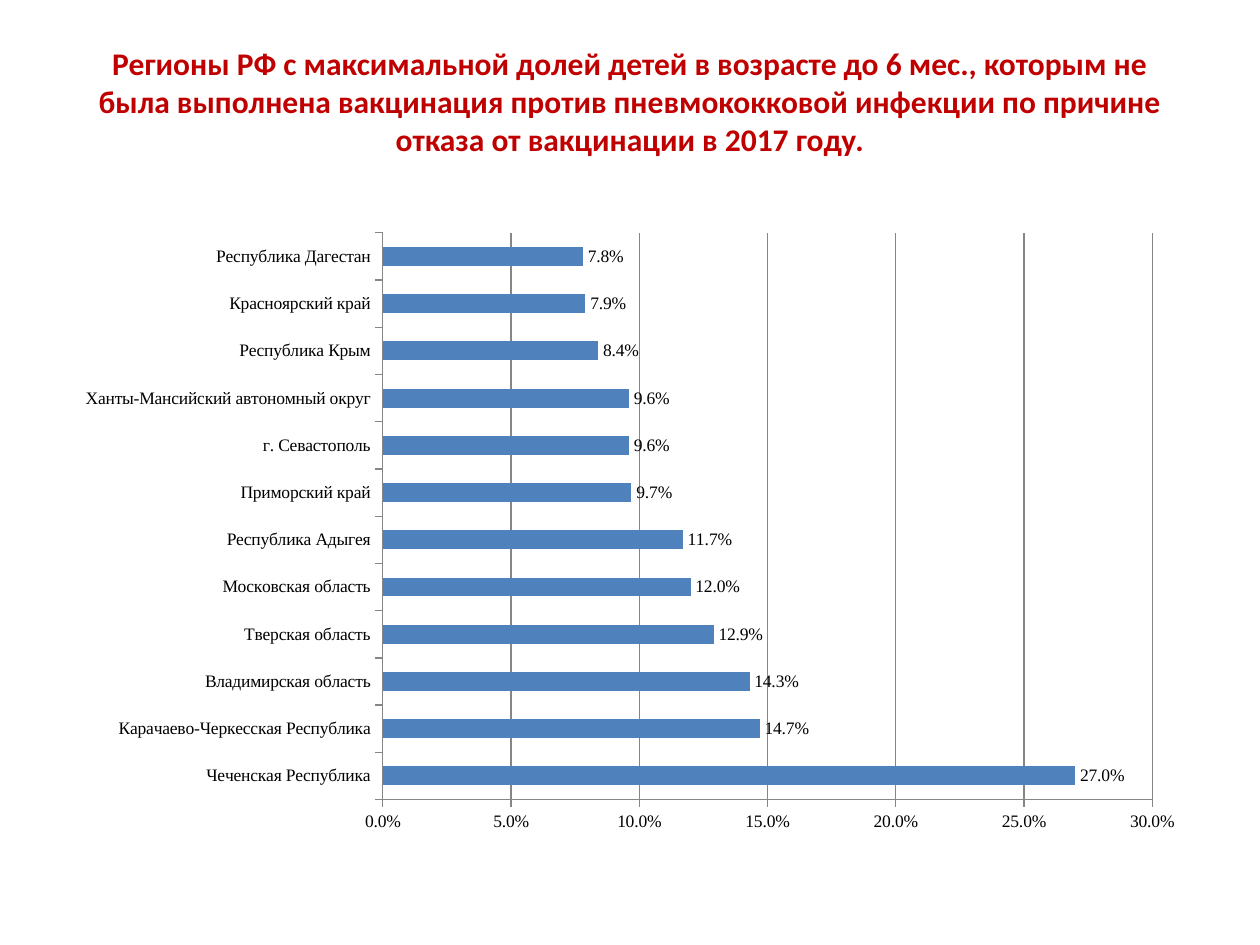
"""Build a slide with a bar chart of vaccination refusals by region."""
from dataclasses import dataclass

from pptx import Presentation
from pptx.chart.data import CategoryChartData
from pptx.dml.color import RGBColor
from pptx.enum.chart import XL_CHART_TYPE, XL_LABEL_POSITION, XL_TICK_MARK
from pptx.enum.text import MSO_ANCHOR, PP_ALIGN
from pptx.util import Pt

BAR = XL_CHART_TYPE.BAR_CLUSTERED
OUTSIDE_END = XL_LABEL_POSITION.OUTSIDE_END
TICK_OUT, TICK_NONE = XL_TICK_MARK.OUTSIDE, XL_TICK_MARK.NONE
TOP, CENTER = MSO_ANCHOR.TOP, PP_ALIGN.CENTER


@dataclass(frozen=True)
class Theme:
    """Colours, fonts and type sizes of the slide."""
    title: RGBColor = RGBColor(0xC0, 0x00, 0x00)
    text: RGBColor = RGBColor(0x00, 0x00, 0x00)
    bar: RGBColor = RGBColor(0x4F, 0x81, 0xBD)
    axis: RGBColor = RGBColor(0x86, 0x86, 0x86)
    title_font: str = "Calibri"
    chart_font: str = "Times New Roman"
    title_size: Pt = Pt(18)
    chart_size: Pt = Pt(10)
    line: Pt = Pt(0.75)


THEME = Theme()
PERCENT = "0.0%"
TITLE = ("Регионы РФ с максимальной долей детей в возрасте до 6 мес., которым не "
         "была выполнена вакцинация против пневмококковой инфекции по причине "
         "отказа от вакцинации в 2017 году.")
REFUSALS = {
    "Чеченская Республика": 0.27,
    "Карачаево-Черкесская Республика": 0.147,
    "Владимирская область": 0.143,
    "Тверская область": 0.129,
    "Московская область": 0.12,
    "Республика Адыгея": 0.117,
    "Приморский край": 0.097,
    "г. Севастополь": 0.096,
    "Ханты-Мансийский автономный округ": 0.096,
    "Республика Крым": 0.084,
    "Красноярский край": 0.079,
    "Республика Дагестан": 0.078,
}


def style_font(font, name, size, color, bold=False):
    """Set the face, size, colour and weight of a font."""
    font.name, font.size, font.bold = name, size, bold
    font.color.rgb = color


def style_line(line):
    """Give an axis line or gridline the theme's stroke."""
    line.color.rgb = THEME.axis
    line.width = THEME.line


def add_title(s, text, left, top, width, height):
    """Add the centred slide title."""
    tf = s.shapes.add_textbox(left, top, width, height).text_frame
    tf.word_wrap = True
    tf.vertical_anchor = TOP
    p = tf.paragraphs[0]
    p.text = text
    p.alignment = CENTER
    style_font(p.font, THEME.title_font, THEME.title_size, THEME.title, bold=True)


def add_bar_chart(s, values, left, top, width, height):
    """Add a horizontal bar chart with percentage labels."""
    data = CategoryChartData(number_format=PERCENT)
    data.categories = values.keys()
    data.add_series("Series 1", values.values())
    chart = s.shapes.add_chart(BAR, left, top, width, height, data).chart
    chart.has_legend = False
    chart.has_title = False
    style_font(chart.font, THEME.chart_font, THEME.chart_size, THEME.text)

    plot = chart.plots[0]
    plot.gap_width = 150
    plot.vary_by_categories = False
    fill = plot.series[0].format.fill
    fill.solid()
    fill.fore_color.rgb = THEME.bar

    labels = plot.series[0].data_labels
    labels.show_value = True
    labels.position = OUTSIDE_END
    labels.number_format = PERCENT
    labels.number_format_is_linked = False

    for axis in (chart.category_axis, chart.value_axis):
        axis.major_tick_mark = TICK_OUT
        axis.minor_tick_mark = TICK_NONE
        style_line(axis.format.line)
    axis = chart.value_axis
    axis.minimum_scale, axis.maximum_scale, axis.major_unit = 0, 0.3, 0.05
    axis.tick_labels.number_format = PERCENT
    axis.tick_labels.number_format_is_linked = False
    axis.has_major_gridlines = True
    style_line(axis.major_gridlines.format.line)


def main():
    """Build and save the presentation."""
    prs = Presentation()
    prs.slide_width, prs.slide_height = Pt(720), Pt(540)
    s = prs.slides.add_slide(prs.slide_layouts[6])
    add_title(s, TITLE, Pt(36), Pt(21.6), Pt(648), Pt(90))
    add_bar_chart(s, REFUSALS, Pt(36), Pt(126), Pt(648), Pt(356.4))
    prs.save("out.pptx")


if __name__ == "__main__":
    main()
